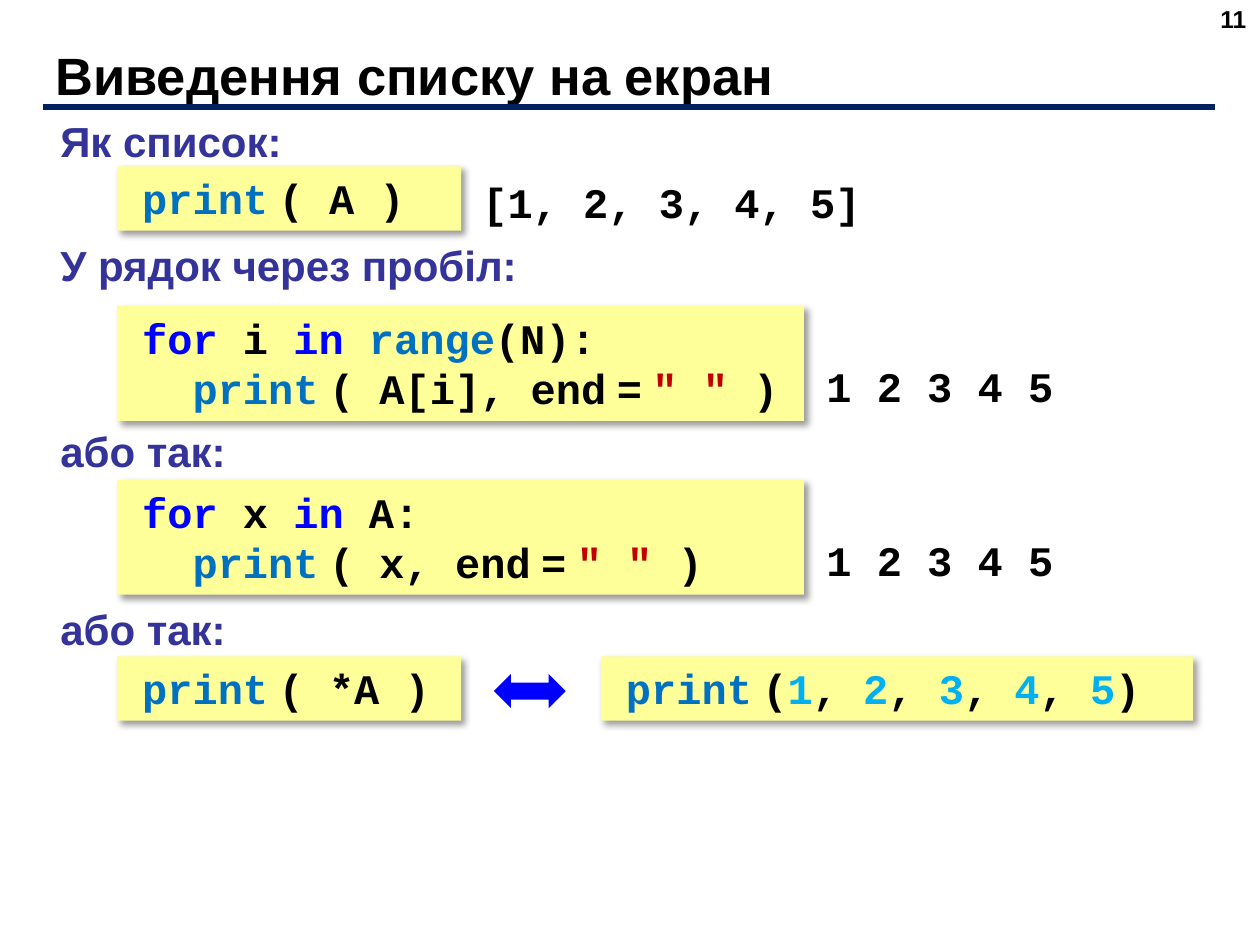
import pptx
import pptx.dml.color
import pptx.enum.shapes
import pptx.enum.text
import pptx.oxml.ns
import pptx.util
from lxml import etree

Inches = pptx.util.Inches
Pt = pptx.util.Pt
ALIGN = pptx.enum.text.PP_ALIGN
ANCHOR = pptx.enum.text.MSO_ANCHOR
SHAPE = pptx.enum.shapes.MSO_SHAPE

BLACK = "000000"
LABEL = "333399"
PANEL = "FFFF99"
KEYWORD = "0000FF"
BUILTIN = "0070C0"
STRING = "C00000"
NUMBER = "00B0F0"
RULE = "002060"

MARGIN = 0.38
CODE_LEFT = 0.93
SHORT_WIDTH = 2.73
LOOP_WIDTH = 5.45
LINE_HEIGHT = 0.51
LOOP_HEIGHT = 0.91
CODE_SIZE = 24
GAP_SIZE = 10

GAP = (" ", BLACK, GAP_SIZE)
PRINT = [("print", BUILTIN), GAP]
END_SPACE = [GAP, ("=", BLACK), GAP, ('" "', STRING), (" )", BLACK)]


def rgb(color):
    return pptx.dml.color.RGBColor.from_string(color)


def add_run(paragraph, text, color, size=CODE_SIZE, font="Courier New"):
    run = paragraph.add_run()
    run.text = text
    run.font.name = font
    run.font.size = Pt(size)
    run.font.bold = True
    run.font.color.rgb = rgb(color)


def add_sub(parent, tag, **attributes):
    return etree.SubElement(parent, pptx.oxml.ns.qn(tag), attributes)


def indent(paragraph, margin, first):
    properties = paragraph._p.get_or_add_pPr()
    properties.set("marL", str(Inches(margin)))
    properties.set("indent", str(Inches(first)))


def add_text(slide, place, text, color=BLACK, size=CODE_SIZE, font="Arial",
             align=ALIGN.LEFT, anchor=ANCHOR.TOP):
    box = slide.shapes.add_textbox(*map(Inches, place))
    frame = box.text_frame
    frame.word_wrap = True
    frame.vertical_anchor = anchor
    paragraph = frame.paragraphs[0]
    paragraph.alignment = align
    add_run(paragraph, text, color, size, font)
    return paragraph


def add_label(slide, top, text):
    place = (MARGIN, top, 5.02, LINE_HEIGHT)
    indent(add_text(slide, place, text, LABEL), 0.19, -0.19)


def add_output(slide, left, top, width, text):
    place = (left, top, width, LINE_HEIGHT)
    indent(add_text(slide, place, text, font="Courier New"), 0.19, -0.19)


def add_filled(slide, kind, place, color):
    shape = slide.shapes.add_shape(kind, *map(Inches, place))
    shape.shadow.inherit = False
    shape.fill.solid()
    shape.fill.fore_color.rgb = rgb(color)
    shape.line.fill.background()
    return shape


def cast_shadow(shape):
    effects = shape._element.spPr.find(pptx.oxml.ns.qn("a:effectLst"))
    shadow = add_sub(effects, "a:outerShdw", blurRad=str(Pt(4)), dist=str(Pt(3)),
                     dir="2700000", algn="tl", rotWithShape="0")
    color = add_sub(shadow, "a:srgbClr", val=BLACK)
    add_sub(color, "a:alpha", val="40000")


def add_code(slide, place, lines):
    panel = add_filled(slide, SHAPE.RECTANGLE, place, PANEL)
    cast_shadow(panel)
    frame = panel.text_frame
    frame.word_wrap = True
    frame.vertical_anchor = ANCHOR.TOP
    for number, tokens in enumerate(lines):
        paragraph = frame.add_paragraph() if number else frame.paragraphs[0]
        paragraph.alignment = ALIGN.JUSTIFY
        indent(paragraph, 0.2, -0.1)
        for token in tokens:
            add_run(paragraph, *token)


def add_rule(slide, left, right, top):
    rule = slide.shapes.add_connector(
        pptx.enum.shapes.MSO_CONNECTOR.STRAIGHT,
        Inches(left), Inches(top), Inches(right), Inches(top))
    rule.line.color.rgb = rgb(RULE)
    rule.line.width = Pt(3)
    add_sub(rule._element.spPr, "a:effectLst")


def loop_code(variable, source, item):
    head = [("for ", KEYWORD), (variable + " ", BLACK), ("in ", KEYWORD), *source]
    body = [("  ", BLACK), *PRINT, (f"( {item}, end", BLACK), *END_SPACE]
    return [head, body]


def unpacked_code():
    tokens = [*PRINT, ("(", BLACK)]
    for value in range(1, 6):
        tokens += [(str(value), NUMBER), (", " if value < 5 else ")", BLACK)]
    return [tokens]


def main():
    presentation = pptx.Presentation()
    presentation.slide_width = Inches(10)
    presentation.slide_height = Inches(7.5)
    slide = presentation.slides.add_slide(presentation.slide_layouts[6])

    add_text(slide, (0.34, 0.33, 9.16, 0.52), "Виведення списку на екран",
             size=30, anchor=ANCHOR.MIDDLE)
    add_text(slide, (7.66, -0.02, 2.33, 0.52), "11", size=14, align=ALIGN.RIGHT)
    add_rule(slide, 0.34, 9.64, 0.85)

    add_label(slide, 0.87, "Як список:")
    add_code(slide, (CODE_LEFT, 1.32, SHORT_WIDTH, LINE_HEIGHT),
             [[*PRINT, ("( A )", BLACK)]])
    add_output(slide, 3.73, 1.35, 3.35, "[1, 2, 3, 4, 5]")

    add_label(slide, 1.85, "У рядок через пробіл:")
    add_label(slide, 3.33, "або так:")
    index_loop = loop_code("i", [("range", BUILTIN), ("(N):", BLACK)], "A[i]")
    item_loop = loop_code("x", [("A:", BLACK)], "x")
    for top, loop in ((2.43, index_loop), (3.81, item_loop)):
        add_code(slide, (CODE_LEFT, top, LOOP_WIDTH, LOOP_HEIGHT), loop)
        add_output(slide, 6.46, top + 0.38, 2.21, "1 2 3 4 5")

    add_label(slide, 4.74, "або так:")
    add_code(slide, (CODE_LEFT, 5.21, SHORT_WIDTH, LINE_HEIGHT),
             [[*PRINT, ("( *A )", BLACK)]])
    add_code(slide, (4.77, 5.21, 4.7, LINE_HEIGHT), unpacked_code())
    add_filled(slide, SHAPE.LEFT_RIGHT_ARROW, (3.92, 5.35, 0.57, 0.27), KEYWORD)

    presentation.save("out.pptx")


if __name__ == "__main__":
    main()
